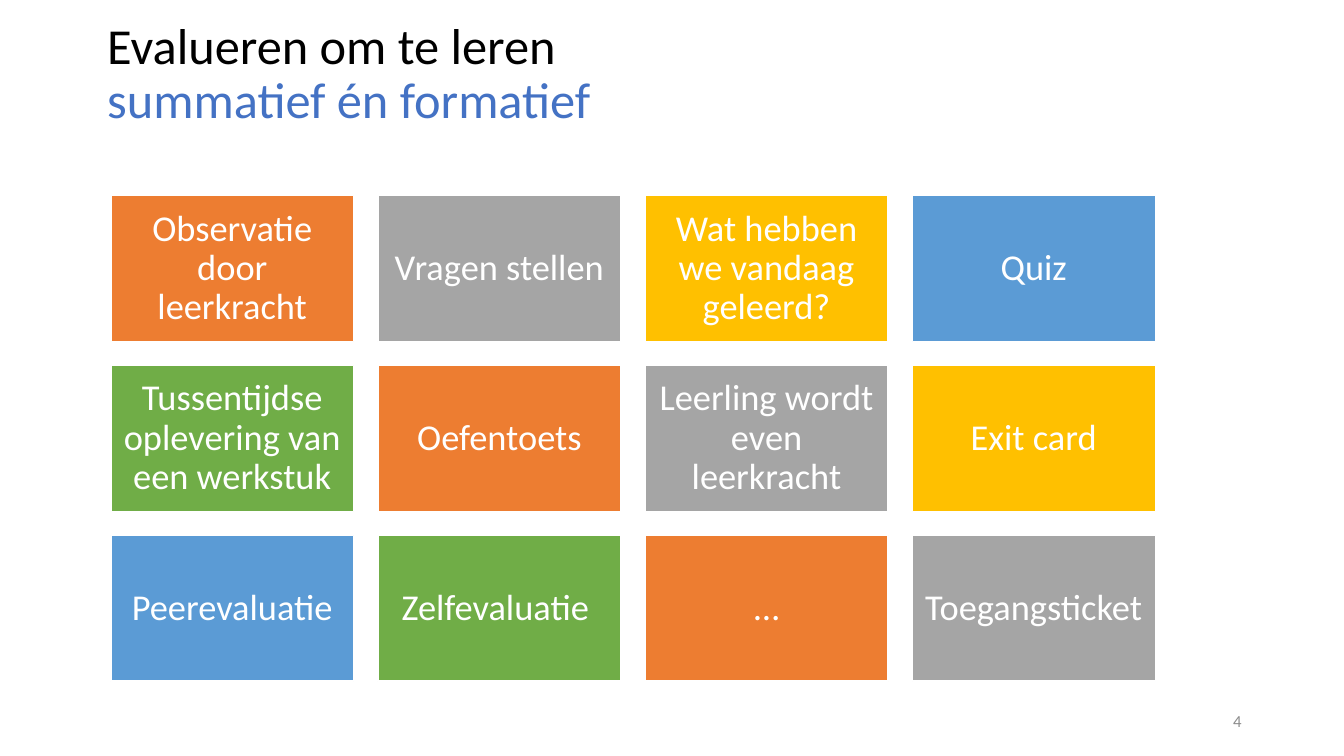
from pptx import Presentation
from pptx.dml.color import RGBColor
from pptx.enum.shapes import MSO_SHAPE as SHAPE
from pptx.enum.text import MSO_ANCHOR as ANCHOR, MSO_AUTO_SIZE as FIT, PP_ALIGN as ALIGN
from pptx.util import Pt

BLACK = RGBColor(0x00, 0x00, 0x00)
WHITE = RGBColor(0xFF, 0xFF, 0xFF)
GRAY_TEXT = RGBColor(0x8C, 0x8C, 0x8C)
ACCENT = RGBColor(0x44, 0x72, 0xC4)
ORANGE = RGBColor(0xED, 0x7D, 0x31)
GRAY = RGBColor(0xA5, 0xA5, 0xA5)
GOLD = RGBColor(0xFF, 0xC0, 0x00)
BLUE = RGBColor(0x5B, 0x9B, 0xD5)
GREEN = RGBColor(0x70, 0xAD, 0x47)

FONT = "Calibri"
TILE_COLORS = [ORANGE, GRAY, GOLD, BLUE, GREEN]
METHODS = [
    "Observatie door leerkracht", "Vragen stellen",
    "Wat hebben we vandaag geleerd?", "Quiz",
    "Tussentijdse oplevering van een werkstuk", "Oefentoets",
    "Leerling wordt even leerkracht", "Exit card",
    "Peerevaluatie", "Zelfevaluatie ", "…", "Toegangsticket",
]


def set_all(obj, values):
    for name, value in values.items():
        setattr(obj, name, value)


def place(sp, box):
    set_all(sp, dict(zip(("left", "top", "width", "height"), map(Pt, box))))


def format_frame(tf, align, spacing=1.0, inset=None):
    set_all(tf, {"word_wrap": True, "auto_size": FIT.NONE,
                 "vertical_anchor": ANCHOR.MIDDLE})
    if inset is not None:
        sides = ("left", "top", "right", "bottom")
        set_all(tf, {f"margin_{side}": Pt(inset) for side in sides})
    p = tf.paragraphs[0]
    set_all(p, {"alignment": align, "line_spacing": spacing})
    return p


def add_run(p, text, size, color):
    r = p.add_run()
    r.text = text
    set_all(r.font, {"name": FONT, "size": Pt(size)})
    r.font.color.rgb = color


def add_title(slide, box):
    sp = slide.shapes.title
    place(sp, box)
    p = format_frame(sp.text_frame, ALIGN.LEFT, 0.9)
    add_run(p, "Evalueren om te leren", 36, BLACK)
    p.add_line_break()
    add_run(p, "summatief én formatief", 36, ACCENT)


def add_tiles(slide, box, columns=4, rows=3, gap_x=17.3, gap_y=17):
    left, top, width, height = box
    tile_w = (width - (columns - 1) * gap_x) / columns
    tile_h = (height - (rows - 1) * gap_y) / rows
    for i, method in enumerate(METHODS):
        row, col = divmod(i, columns)
        x = left + col * (tile_w + gap_x)
        y = top + row * (tile_h + gap_y)
        sp = slide.shapes.add_shape(
            SHAPE.RECTANGLE, Pt(x), Pt(y), Pt(tile_w), Pt(tile_h))
        sp.shadow.inherit = False
        sp.fill.solid()
        sp.fill.fore_color.rgb = TILE_COLORS[i % len(TILE_COLORS)]
        sp.line.color.rgb = WHITE
        sp.line.width = Pt(1)
        p = format_frame(sp.text_frame, ALIGN.CENTER, 0.9, inset=7.8)
        add_run(p, method, 26, WHITE)


def add_page_number(slide, box):
    sp = slide.shapes.add_textbox(*map(Pt, box))
    p = format_frame(sp.text_frame, ALIGN.RIGHT)
    add_run(p, "4", 12, GRAY_TEXT)


def main():
    prs = Presentation()
    set_all(prs, {"slide_width": Pt(960), "slide_height": Pt(540)})
    slide = prs.slides.add_slide(prs.slide_layouts[5])  # title only

    # Heading, grid of evaluation methods, page number
    add_title(slide, (69.4, 1.5, 828, 104.4))
    add_tiles(slide, (79.2, 139.7, 746, 346.9))
    add_page_number(slide, (678, 500.5, 216, 28.75))

    prs.save("out.pptx")


if __name__ == "__main__":
    main()
